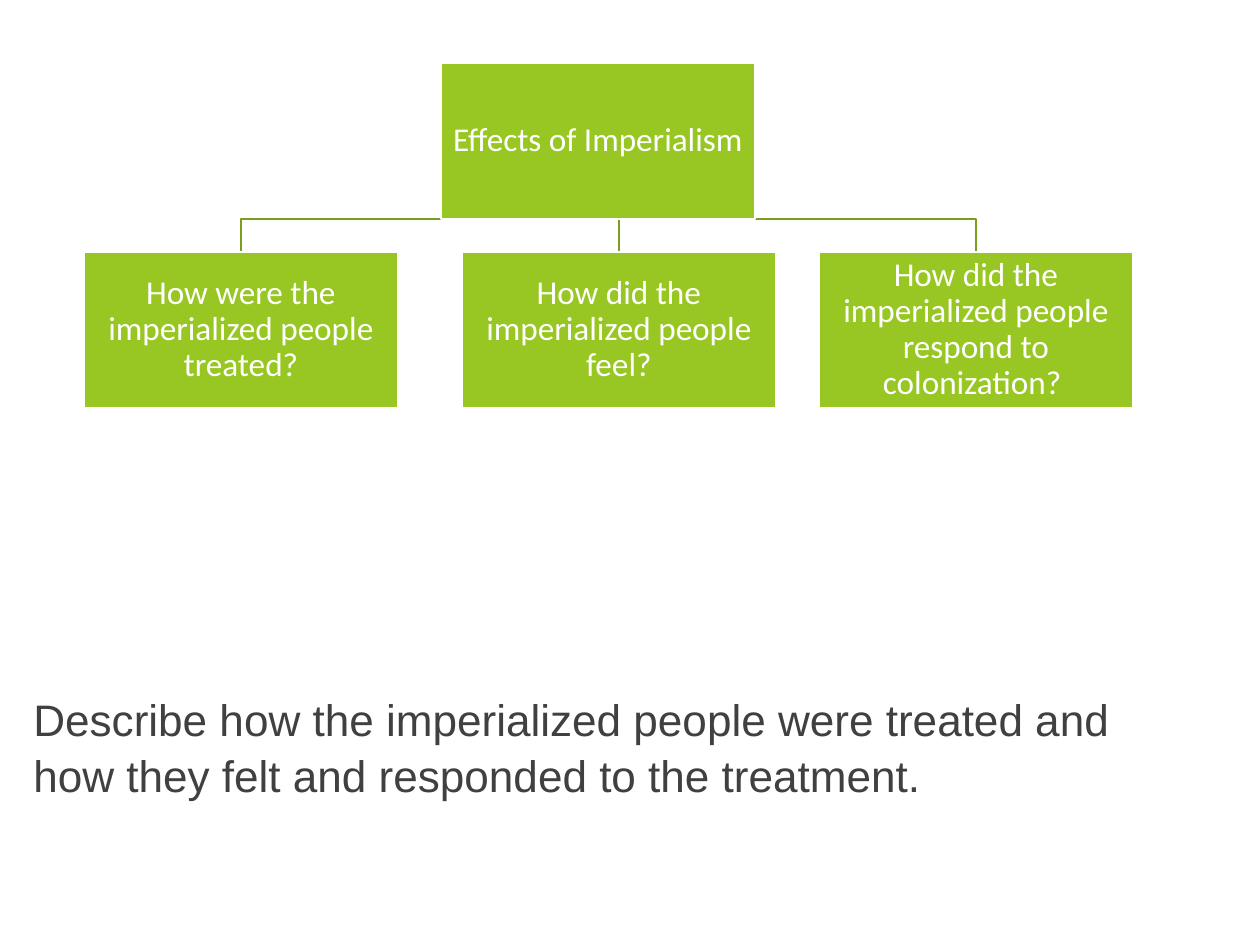
from pptx import Presentation
from pptx.dml.color import RGBColor
from pptx.enum.shapes import MSO_SHAPE as Shape
from pptx.enum.text import MSO_ANCHOR as Anchor, PP_ALIGN as Align
from pptx.util import Inches, Pt

COLUMNS, ROWS = 60, 45  # grid cells are 1/6 inch
BOX_WIDTH, BOX_HEIGHT = 14.94, 7.44
ROOT_COLUMN, ROOT_ROW = 21, 3
QUESTION_ROW = 12
QUESTIONS = [
    (22, "How did the imperialized people feel?"),
    (4, "How were the imperialized people treated?"),
    (39, "How did the imperialized people respond to colonization? "),
]
GREEN, DARK_GREEN, WHITE, GREY = "98C723", "7A9F1C", "FFFFFF", "404040"
BOX_FONT = {"name": "Calibri", "size": Pt(19)}
PROMPT_FONT = {"name": "Arial", "size": Pt(25.2)}


def grid(cells):
    return Inches(cells / 6)


def color(hex_code):
    return RGBColor.from_string(hex_code)


def set_line(shape, hex_code):
    shape.line.color.rgb = color(hex_code)
    shape.line.width = Pt(1.25)
    shape.shadow.inherit = False


def write(frame, text, font, hex_code, align, spacing, inset):
    frame_format = {"word_wrap": True, "vertical_anchor": Anchor.MIDDLE}
    for side in ("left", "top", "right", "bottom"):
        frame_format[f"margin_{side}"] = inset
    for key, value in frame_format.items():
        setattr(frame, key, value)
    paragraph = frame.paragraphs[0]
    paragraph.alignment, paragraph.line_spacing = align, spacing
    run = paragraph.add_run()
    run.text = text
    for key, value in font.items():
        setattr(run.font, key, value)
    run.font.color.rgb = color(hex_code)


def add_branch(slide, question_column):
    """Run from the root's bottom middle across, then down to a question."""
    start_x, start_y = grid(ROOT_COLUMN + BOX_WIDTH / 2), grid(ROOT_ROW + BOX_HEIGHT)
    end_x = grid(question_column + BOX_WIDTH / 2)
    builder = slide.shapes.build_freeform(start_x, start_y)
    builder.add_line_segments(
        [(end_x, start_y), (end_x, grid(QUESTION_ROW))], close=False)
    branch = builder.convert_to_shape()
    branch.fill.background()
    set_line(branch, DARK_GREEN)


def add_topic(slide, column, row, text):
    topic = slide.shapes.add_shape(
        Shape.RECTANGLE, *map(grid, (column, row, BOX_WIDTH, BOX_HEIGHT)))
    topic.fill.solid()
    topic.fill.fore_color.rgb = color(GREEN)
    set_line(topic, WHITE)
    write(topic.text_frame, text, BOX_FONT, WHITE, Align.CENTER, 0.9, Inches(0.01))


def add_prompt(slide, text):
    prompt = slide.shapes.add_textbox(*map(grid, (1, 33, 54, 5)))
    write(prompt.text_frame, text, PROMPT_FONT, GREY, Align.LEFT, 1.05, Inches(0.1))


def main():
    deck = Presentation()
    deck.slide_width, deck.slide_height = grid(COLUMNS), grid(ROWS)
    slide = deck.slides.add_slide(deck.slide_layouts[6])
    for column, _ in QUESTIONS:
        add_branch(slide, column)
    add_topic(slide, ROOT_COLUMN, ROOT_ROW, "Effects of Imperialism")
    for column, question in sorted(QUESTIONS):
        add_topic(slide, column, QUESTION_ROW, question)
    add_prompt(slide, "Describe how the imperialized people were treated and "
                      "how they felt and responded to the treatment.")
    deck.save("out.pptx")


if __name__ == "__main__":
    main()
